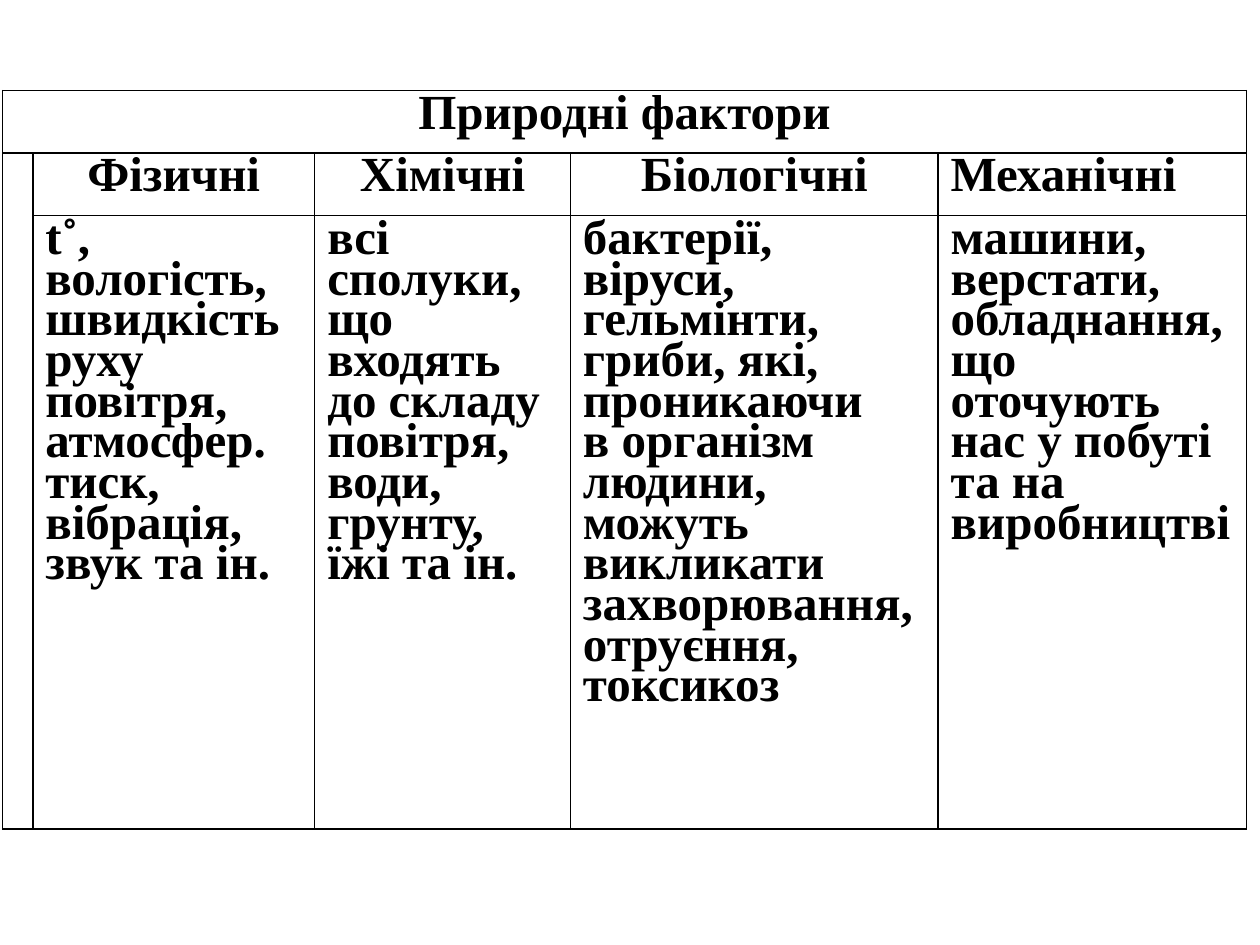
from dataclasses import dataclass

from lxml.etree import SubElement
from pptx import Presentation
from pptx.dml.color import RGBColor
from pptx.enum.text import PP_ALIGN as Align
from pptx.oxml.ns import qn
from pptx.util import Pt


@dataclass(frozen=True)
class Theme:
    ink: str = "000000"
    font: str = "Times New Roman"
    size: float = 28
    line_spacing: float = 0.75
    hanging: float = 18
    border: float = 1


THEME = Theme()
TITLE = "Природні фактори"
FACTORS = [
    ("Фізичні", Align.CENTER,
     ["t˚,", "вологість,", "швидкість", "руху", "повітря,", "атмосфер.",
      "тиск,", "вібрація,", "звук та ін."]),
    ("Хімічні", Align.CENTER,
     ["всі", "сполуки,", "що", "входять", "до складу", "повітря,", "води,",
      "грунту,", "їжі та ін."]),
    ("Біологічні", Align.CENTER,
     ["бактерії,", "віруси,", "гельмінти,", "гриби, які,", "проникаючи",
      "в організм", "людини,", "можуть", "викликати", "захворювання,",
      "отруєння,", "токсикоз"]),
    ("Механічні", Align.LEFT,
     ["машини,", "верстати,", "обладнання,", "що", "оточують",
      "нас у побуті", "та на", "виробництві"]),
]
COLUMN_WIDTHS = [17, 161, 146, 210, 176]
HEADER_HEIGHT = 35.75


def write(frame, lines, align=Align.LEFT, bold=True, color=THEME.ink):
    """Put each line in its own paragraph with a hanging indent."""
    for number, line in enumerate(lines):
        paragraph = frame.paragraphs[0] if number == 0 else frame.add_paragraph()
        properties = paragraph._p.get_or_add_pPr()
        properties.set("marL", str(Pt(THEME.hanging)))
        properties.set("indent", str(-Pt(THEME.hanging)))
        paragraph.alignment = align
        paragraph.line_spacing = THEME.line_spacing
        run = paragraph.add_run()
        run.text = line
        run.font.name = THEME.font
        run.font.size = Pt(THEME.size)
        run.font.bold = bold
        run.font.color.rgb = RGBColor.from_string(color)


def outline(cell):
    properties = cell._tc.get_or_add_tcPr()
    for side in ("a:lnL", "a:lnR", "a:lnT", "a:lnB"):
        edge = SubElement(properties, qn(side), w=str(Pt(THEME.border)))
        fill = SubElement(edge, qn("a:solidFill"))
        SubElement(fill, qn("a:srgbClr"), val=THEME.ink)
    cell.fill.background()


def add_factor_table(slide, left, top, width, height):
    row_heights = [HEADER_HEIGHT, HEADER_HEIGHT, height - 2 * HEADER_HEIGHT]
    table = slide.shapes.add_table(
        len(row_heights), len(COLUMN_WIDTHS),
        Pt(left), Pt(top), Pt(width), Pt(height)).table
    table.first_row = table.horz_banding = False
    scale = width / sum(COLUMN_WIDTHS)
    for column, share in zip(table.columns, COLUMN_WIDTHS):
        column.width = Pt(share * scale)
    for row, row_height in zip(table.rows, row_heights):
        row.height = Pt(row_height)
    for cell in table.iter_cells():
        outline(cell)

    table.cell(0, 0).merge(table.cell(0, len(FACTORS)))
    table.cell(1, 0).merge(table.cell(2, 0))
    write(table.cell(0, 0).text_frame, [TITLE], align=Align.CENTER)
    for column, (heading, align, examples) in enumerate(FACTORS, start=1):
        write(table.cell(1, column).text_frame, [heading], align=align)
        write(table.cell(2, column).text_frame, examples)


def main():
    deck = Presentation()
    deck.slide_width, deck.slide_height = Pt(720), Pt(540)
    slide = deck.slides.add_slide(deck.slide_layouts[6])
    add_factor_table(slide, left=1.5, top=51.75, width=710.5, height=422)
    deck.save("out.pptx")


if __name__ == "__main__":
    main()
